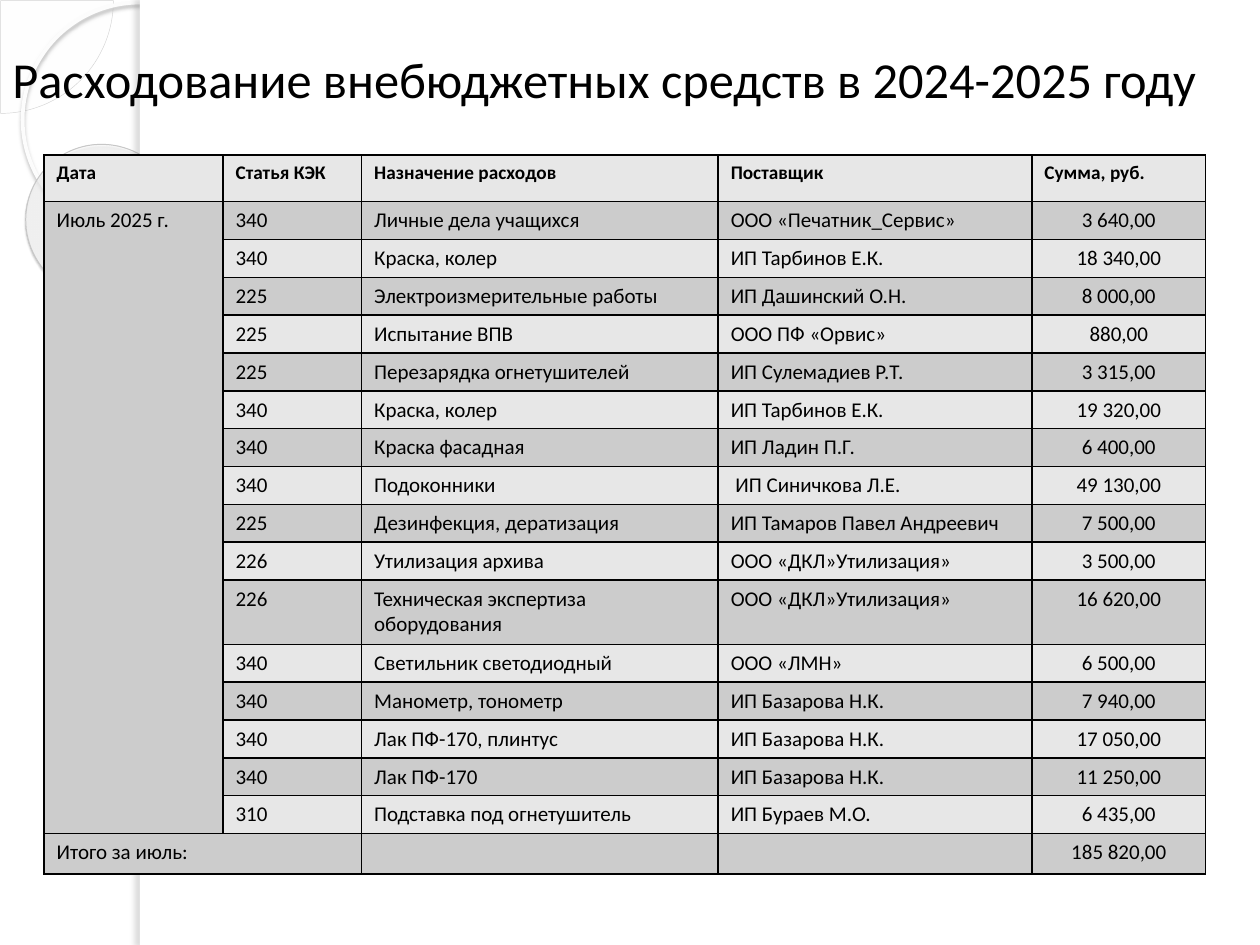
from lxml import etree
from pptx import Presentation
from pptx.dml.color import RGBColor
from pptx.enum.shapes import MSO_SHAPE
from pptx.enum.text import MSO_ANCHOR, PP_ALIGN
from pptx.oxml import parse_xml
from pptx.oxml.ns import nsdecls, qn
from pptx.util import Inches, Pt

PIE, OVAL, DONUT, RECT = MSO_SHAPE.PIE, MSO_SHAPE.OVAL, MSO_SHAPE.DONUT, MSO_SHAPE.RECTANGLE
MIDDLE = MSO_ANCHOR.MIDDLE
LEFT, CENTER = PP_ALIGN.LEFT, PP_ALIGN.CENTER

FONT = "Calibri"
COLORS = {
    "text": "000000", "border": "000000", "panel": "FFFFFF",
    "light_row": "E7E7E7", "dark_row": "CCCCCC",
    "pie": "FEFEFE", "pie_line": "D4D4D4", "ring_line": "FCFCFC",
    "donut_line": "C7C7C7", "ring_shadow": "B7B7B7",
    "donut_shadow": "5B5B5B", "edge_shadow": "7B7B7B",
}
DONUT_STOPS = [(0, "FDFDFD", 70), (70, "FFFFFF", 55), (100, "DBDBDB", 60)]

TITLE = "Расходование внебюджетных средств в 2024-2025 году"
HEADER = ("Дата", "Статья КЭК", "Назначение расходов", "Поставщик", "Сумма, руб.")
MONTH = "Июль 2025 г."
EXPENSES = [
    ("340", "Личные дела учащихся", "ООО «Печатник_Сервис»", "3 640,00"),
    ("340", "Краска, колер", "ИП Тарбинов Е.К.", "18 340,00"),
    ("225", "Электроизмерительные работы", "ИП Дашинский О.Н.", "8 000,00"),
    ("225", "Испытание ВПВ", "ООО ПФ «Орвис»", "880,00"),
    ("225", "Перезарядка огнетушителей", "ИП Сулемадиев Р.Т.", "3 315,00"),
    ("340", "Краска, колер", "ИП Тарбинов Е.К.", "19 320,00"),
    ("340", "Краска фасадная", "ИП Ладин П.Г.", "6 400,00"),
    ("340", "Подоконники", " ИП Синичкова Л.Е.", "49 130,00"),
    ("225", "Дезинфекция, дератизация", "ИП Тамаров Павел Андреевич", "7 500,00"),
    ("226", "Утилизация архива", "ООО «ДКЛ»Утилизация»", "3 500,00"),
    ("226", "Техническая экспертиза оборудования", "ООО «ДКЛ»Утилизация»", "16 620,00"),
    ("340", "Светильник светодиодный", "ООО «ЛМН»", "6 500,00"),
    ("340", "Манометр, тонометр", "ИП Базарова Н.К.", "7 940,00"),
    ("340", "Лак ПФ-170, плинтус", "ИП Базарова Н.К.", "17 050,00"),
    ("340", "Лак ПФ-170", "ИП Базарова Н.К.", "11 250,00"),
    ("310", "Подставка под огнетушитель", "ИП Бураев М.О.", "6 435,00"),
]
TOTAL = ("Итого за июль:", "", "", "", "185 820,00")

COLUMN_WIDTHS = (1.42, 1.1, 2.83, 2.49, 1.38)
HEADER_HEIGHT, ROW_HEIGHT, TWO_LINE_HEIGHT, TOTAL_HEIGHT = 0.37, 0.3, 0.51, 0.32
TWO_LINE_LENGTH = 30  # a longer purpose wraps in its column


def rgb(name):
    return RGBColor.from_string(COLORS[name])


def color_xml(value, alpha):
    return f'<a:srgbClr val="{value}"><a:alpha val="{alpha * 1000}"/></a:srgbClr>'


def add_decoration(slide, preset, box, fill=None, line=None, line_width=0, adjustments=()):
    shape = slide.shapes.add_shape(preset, *map(Inches, box))
    shape.shadow.inherit = False
    for index, value in enumerate(adjustments):
        shape.adjustments[index] = value
    if fill:
        shape.fill.solid()
        shape.fill.fore_color.rgb = rgb(fill)
    else:
        shape.fill.background()
    if line:
        shape.line.color.rgb = rgb(line)
        shape.line.width = Pt(line_width)
    else:
        shape.line.fill.background()
    return shape


def add_shadow(shape, color, alpha, blur, distance, angle):
    effects = shape.element.spPr.find(qn("a:effectLst"))
    effects.append(parse_xml(
        f'<a:outerShdw {nsdecls("a")} blurRad="{Pt(blur)}" dist="{Pt(distance)}" '
        f'dir="{angle * 60000}" rotWithShape="0">{color_xml(COLORS[color], alpha)}</a:outerShdw>'))


def set_radial_gradient(shape, stops):
    stop_xml = "".join(f'<a:gs pos="{position * 1000}">{color_xml(value, alpha)}</a:gs>'
                       for position, value, alpha in stops)
    properties = shape.element.spPr
    properties.replace(properties.find(qn("a:noFill")), parse_xml(
        f'<a:gradFill {nsdecls("a")} rotWithShape="1"><a:gsLst>{stop_xml}</a:gsLst>'
        '<a:path path="circle"><a:fillToRect l="-408000" t="-50000" r="508000" b="150000"/>'
        '</a:path></a:gradFill>'))


def add_background(slide):
    pie = add_decoration(slide, PIE, (-0.89, -0.89, 1.79, 1.79), "pie", "pie_line", 0.25, (0, 54))
    pie_color = pie.element.spPr.find(qn("a:solidFill"))[0]
    etree.SubElement(pie_color, qn("a:alpha"), val="33000")

    ring = add_decoration(slide, OVAL, (0.18, 0.02, 1.86, 1.86), None, "ring_line", 2.15)
    add_shadow(ring, "ring_shadow", 85, 2, 2, 90)

    donut = add_decoration(slide, DONUT, (0.2, 1.15, 1.23, 1.21), None, "donut_line", 0.58, (0.12,))
    donut.rotation = 38.6
    set_radial_gradient(donut, DONUT_STOPS)
    add_shadow(donut, "donut_shadow", 35, 1, 1.2, 75)

    add_decoration(slide, RECT, (1.11, 0, 8.89, 7.5), "panel")
    edge = add_decoration(slide, RECT, (1.11, 0, 0.08, 7.5), "panel")
    add_shadow(edge, "edge_shadow", 25, 3, 3, 180)


def style_text(paragraph, size, bold=False, align=LEFT):
    paragraph.alignment = align
    font = paragraph.font
    font.name, font.size, font.bold = FONT, Pt(size), bold
    font.color.rgb = rgb("text")


def add_title(slide):
    frame = slide.shapes.add_textbox(*map(Inches, (0, 0.36, 10, 0.52))).text_frame
    frame.word_wrap = True
    frame.vertical_anchor = MIDDLE
    frame.text = TITLE
    style_text(frame.paragraphs[0], 28.8)


def add_borders(cell):
    properties = cell._tc.get_or_add_tcPr()
    for side in ("lnL", "lnR", "lnT", "lnB"):
        properties.append(parse_xml(
            f'<a:{side} {nsdecls("a")} w="{Pt(1)}"><a:solidFill>'
            f'<a:srgbClr val="{COLORS["border"]}"/></a:solidFill></a:{side}>'))


def add_expense_table(slide):
    months = [MONTH] + [""] * (len(EXPENSES) - 1)
    rows = [HEADER, *((month, *expense) for month, expense in zip(months, EXPENSES)), TOTAL]
    heights = [HEADER_HEIGHT,
               *(TWO_LINE_HEIGHT if len(expense[1]) > TWO_LINE_LENGTH else ROW_HEIGHT
                 for expense in EXPENSES),
               TOTAL_HEIGHT]
    last_row, last_column = len(rows) - 1, len(HEADER) - 1
    table = slide.shapes.add_table(
        len(rows), len(HEADER), Inches(0.35), Inches(1.23),
        Inches(sum(COLUMN_WIDTHS)), Inches(sum(heights))).table
    for column, width in zip(table.columns, COLUMN_WIDTHS):
        column.width = Inches(width)
    for r, (row, height) in enumerate(zip(rows, heights)):
        table.rows[r].height = Inches(height)
        dark = r % 2 == 1 or r == last_row
        for c, text in enumerate(row):
            cell = table.cell(r, c)
            cell.text = text
            is_amount = r > 0 and c == last_column
            style_text(cell.text_frame.paragraphs[0], 12 if r else 11, r == 0,
                       CENTER if is_amount else LEFT)
            add_borders(cell)
            cell.fill.solid()
            cell.fill.fore_color.rgb = rgb("dark_row" if dark else "light_row")
    table.cell(1, 0).merge(table.cell(last_row - 1, 0))
    table.cell(last_row, 0).merge(table.cell(last_row, 1))


def main():
    deck = Presentation()
    deck.slide_width, deck.slide_height = Inches(10), Inches(7.5)
    slide = deck.slides.add_slide(deck.slide_layouts[6])
    add_background(slide)
    add_title(slide)
    add_expense_table(slide)
    deck.save("out.pptx")


if __name__ == "__main__":
    main()
